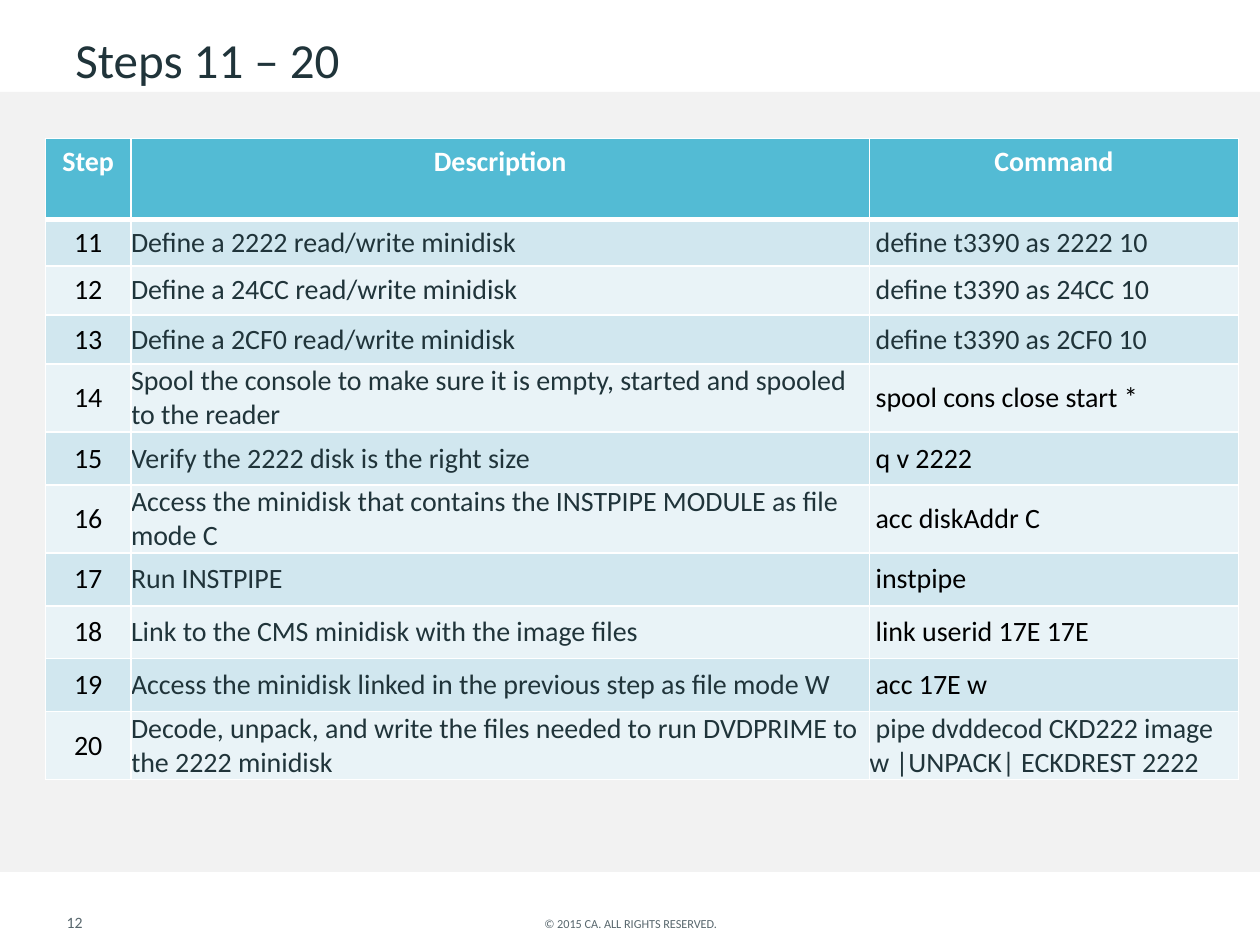
from lxml import etree
from pptx import Presentation
from pptx.dml.color import RGBColor
from pptx.enum import shapes, text
from pptx.oxml import ns
from pptx import util as u

WHITE = RGBColor(0xFF, 0xFF, 0xFF)
BLACK = RGBColor(0x00, 0x00, 0x00)
INK = RGBColor(0x20, 0x34, 0x3A)
GREY = RGBColor(0x58, 0x67, 0x6D)
PANEL = RGBColor(0xF2, 0xF2, 0xF2)
HEADER = RGBColor(0x53, 0xBB, 0xD4)
BANDS = (RGBColor(0xE9, 0xF3, 0xF7), RGBColor(0xD1, 0xE7, 0xEF))

HEADINGS = ("Step", "Description", "Command")
STEPS = [
    ("Define a 2222 read/write minidisk", " define t3390 as 2222 10", INK),
    ("Define a 24CC read/write minidisk", " define t3390 as 24CC 10", INK),
    ("Define a 2CF0 read/write minidisk", " define t3390 as 2CF0 10", INK),
    ("Spool the console to make sure it is empty, started and spooled to the reader",
     " spool cons close start *", BLACK),
    ("Verify the 2222 disk is the right size", " q v 2222", BLACK),
    ("Access the minidisk that contains the INSTPIPE MODULE as file mode C",
     " acc diskAddr C", BLACK),
    ("Run INSTPIPE", " instpipe", BLACK),
    ("Link to the CMS minidisk with the image files", " link userid 17E 17E", BLACK),
    ("Access the minidisk linked in the previous step as file mode W", " acc 17E w", BLACK),
    ("Decode, unpack, and write the files needed to run DVDPRIME to the 2222 minidisk",
     " pipe dvddecod CKD222 image w |UNPACK| ECKDREST 2222", INK),
]
COLUMN_WIDTHS = (6.8, 58.6, 29.3)
ROW_HEIGHTS = (6.4, 3.7, 3.9, 3.9, 5.4, 4.2, 5.4, 4.2, 4.2, 4.2, 5.4)


class StepsPage:
    """Draws styled elements on one slide, measured on a 100 by 75 grid."""

    font_name = "Calibri"

    def __init__(self, deck):
        self.unit = deck.slide_width / 100
        self.page = deck.slides.add_slide(deck.slide_layouts[6])

    def size(self, *cells):
        return [u.Emu(round(cell * self.unit)) for cell in cells]

    def set_words(self, frame, words, points, colour, align, bold=False):
        frame.text = words
        para = frame.paragraphs[0]
        para.alignment = align
        for span in para.runs:
            span.font.name = self.font_name
            span.font.size = u.Pt(points)
            span.font.bold = bold
            span.font.color.rgb = colour
        return para

    def label(self, area, words, points, colour, anchor, align=text.PP_ALIGN.LEFT):
        frame = self.page.shapes.add_textbox(*self.size(*area)).text_frame
        frame.word_wrap = True
        frame.vertical_anchor = anchor
        return self.set_words(frame, words, points, colour, align)

    def panel(self, area, colour):
        box = self.page.shapes.add_shape(shapes.MSO_SHAPE.RECTANGLE, *self.size(*area))
        box.shadow.inherit = False
        box.fill.solid()
        box.fill.fore_color.rgb = colour
        box.line.fill.background()

    def border(self, cell, side, points):
        line = etree.SubElement(cell._tc.get_or_add_tcPr(), ns.qn(f"a:ln{side}"),
                                w=str(u.Pt(points)))
        fill = etree.SubElement(line, ns.qn("a:solidFill"))
        etree.SubElement(fill, ns.qn("a:srgbClr"), val=str(WHITE))

    def cell(self, table, row, column, words, colour):
        cell = table.cell(row, column)
        is_header = row == 0
        centred = is_header or column == 0
        self.set_words(cell.text_frame, words, 16, colour,
                       text.PP_ALIGN.CENTER if centred else text.PP_ALIGN.LEFT, is_header)
        if not is_header:
            cell.vertical_anchor = text.MSO_ANCHOR.MIDDLE
            cell.margin_left = cell.margin_right = cell.margin_top = cell.margin_bottom = 0
        for side in "LRTB":
            under_header = (row, side) in ((0, "B"), (1, "T"))
            self.border(cell, side, 3 if under_header else 1)
        cell.fill.solid()
        cell.fill.fore_color.rgb = HEADER if is_header else BANDS[row % 2]

    def table(self, left, top, widths, heights):
        area = self.size(left, top, sum(widths), sum(heights))
        table = self.page.shapes.add_table(len(heights), len(widths), *area).table
        for column, width in zip(table.columns, self.size(*widths)):
            column.width = width
        for row, height in zip(table.rows, self.size(*heights)):
            row.height = height
        return table


def main():
    deck = Presentation()
    deck.slide_width, deck.slide_height = u.Inches(10), u.Inches(7.5)
    page = StepsPage(deck)
    bottom = text.MSO_ANCHOR.BOTTOM
    page.label((4.3, 70.7, 5.8, 3.7), "12", 9, GREY, bottom)
    page.label((13.7, 70.7, 72.7, 3.7), "© 2015 CA. ALL RIGHTS RESERVED.", 7, GREY,
               bottom, text.PP_ALIGN.CENTER)
    title = page.label((5, 2.3, 90, 5.3), "Steps 11 – 20", 28, INK, text.MSO_ANCHOR.MIDDLE)
    title.line_spacing = 0.9
    page.panel((0, 7.3, 100, 61.9), PANEL)

    table = page.table(3.6, 11, COLUMN_WIDTHS, ROW_HEIGHTS)
    for column, heading in enumerate(HEADINGS):
        page.cell(table, 0, column, heading, WHITE)
    for row, (description, command, colour) in enumerate(STEPS, start=1):
        page.cell(table, row, 0, str(row + 10), BLACK)
        page.cell(table, row, 1, description, INK)
        page.cell(table, row, 2, command, colour)
    deck.save("out.pptx")


if __name__ == "__main__":
    main()
